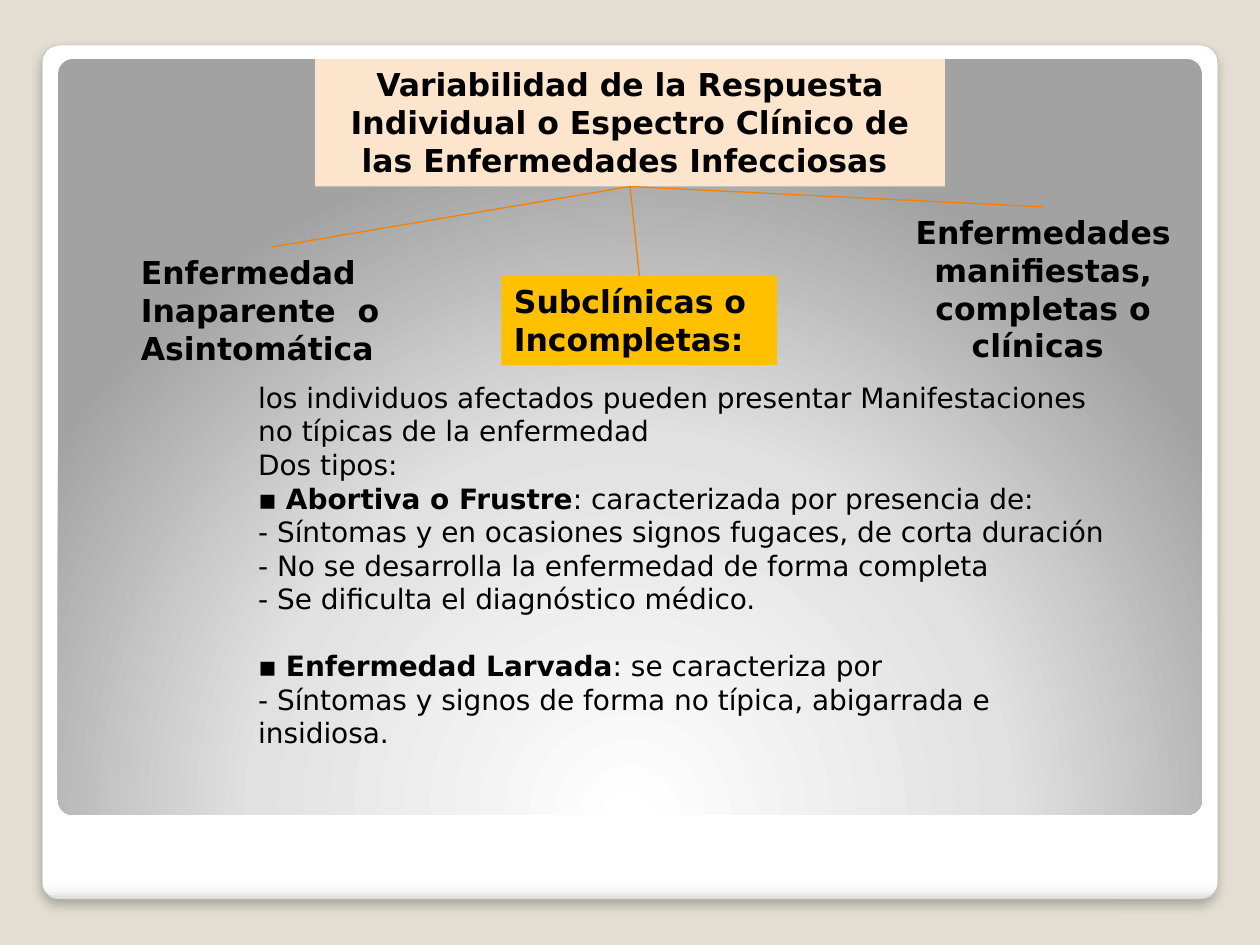
from pptx import Presentation
from pptx.dml.color import RGBColor
from pptx.enum.shapes import MSO_CONNECTOR, MSO_SHAPE
from pptx.enum.text import MSO_ANCHOR, MSO_AUTO_SIZE, PP_ALIGN
from pptx.oxml import parse_xml
from pptx.oxml.ns import nsdecls, qn
from pptx.util import Cm, Pt

FONT = "DejaVu Sans"
BLACK = RGBColor(0x00, 0x00, 0x00)
BEIGE = RGBColor(0xE3, 0xDE, 0xD1)
PEACH = RGBColor(0xFD, 0xE5, 0xCD)
AMBER = RGBColor(0xFF, 0xC0, 0x00)
ORANGE = RGBColor(0xF9, 0x7F, 0x00)
GRAY = RGBColor(0xA4, 0xA4, 0xA4)

CARD_STOPS = [(0, "FFFFFF"), (98, "FFFFFF"), (99, "F7F7F7"), (100, "DADADA")]
CARD_DIRECTION = '<a:lin ang="5400000" scaled="0"/>'
PANEL_STOPS = [(0, "FFFFFF"), (55, "E1E1E1"), (100, "A2A2A2")]
PANEL_DIRECTION = (
    '<a:path path="circle">'
    '<a:fillToRect l="50000" t="175000" r="50000" b="-75000"/></a:path>'
)

TITLE = ("Variabilidad de la Respuesta Individual o Espectro Clínico de "
         "las Enfermedades Infecciosas ")
BRANCHES = [
    ("Enfermedad Inaparente  o Asintomática",
     (2.59, 4.98, 5.77, 2.57), PP_ALIGN.LEFT, None),
    ("Subclínicas o Incompletas:",
     (10.11, 5.56, 5.56, 1.8), PP_ALIGN.LEFT, AMBER),
    ("Enfermedades manifiestas, completas o clínicas ",
     (17.65, 4.17, 6.76, 3.33), PP_ALIGN.CENTER, None),
]
DETAILS = [
    ("los individuos afectados pueden presentar Manifestaciones "
     "no típicas de la enfermedad",),
    ("Dos tipos:",),
    ("▪ ", "Abortiva o Frustre", ": caracterizada por presencia de:"),
    ("- Síntomas y en ocasiones signos fugaces, de corta duración",),
    ("- No se desarrolla la enfermedad de forma completa",),
    ("- Se dificulta el diagnóstico médico.",),
    ("▪ ", "Enfermedad Larvada", ": se caracteriza por"),
    ("- Síntomas y signos de forma no típica, abigarrada e insidiosa.",),
]
SECOND_TYPE = 6


def place(shape, box):
    """Move and size a shape to a box in centimetres."""
    shape.left, shape.top, shape.width, shape.height = map(Cm, box)


def format_font(font, size, bold):
    """Apply the slide's typeface."""
    font.name = FONT
    font.size = Pt(size)
    font.bold = bold
    font.color.rgb = BLACK


def set_up_frame(text_frame):
    """Wrap the text from the top without shrinking it."""
    text_frame.word_wrap = True
    text_frame.auto_size = MSO_AUTO_SIZE.NONE
    text_frame.vertical_anchor = MSO_ANCHOR.TOP


def write_heading(shape, text, alignment, fill):
    """Write a bold heading on an optional fill."""
    set_up_frame(shape.text_frame)
    shape.text_frame.text = text
    paragraph = shape.text_frame.paragraphs[0]
    paragraph.alignment = alignment
    format_font(paragraph.runs[0].font, 18, True)
    if fill is not None:
        shape.fill.solid()
        shape.fill.fore_color.rgb = fill


def add_gradient_panel(slide, box, stops, direction):
    """Add a rounded panel with a gradient fill."""
    panel = slide.shapes.add_shape(MSO_SHAPE.ROUNDED_RECTANGLE, *map(Cm, box))
    panel.adjustments[0] = 0.02
    panel.shadow.inherit = False
    panel.line.fill.background()
    panel.fill.background()
    stop_list = "".join(
        f'<a:gs pos="{position * 1000}"><a:srgbClr val="{color}"/></a:gs>'
        for position, color in stops
    )
    gradient = parse_xml(
        f'<a:gradFill {nsdecls("a")} rotWithShape="1">'
        f"<a:gsLst>{stop_list}</a:gsLst>{direction}</a:gradFill>"
    )
    properties = panel._element.spPr
    properties.replace(properties.find(qn("a:noFill")), gradient)
    return panel


def add_background(slide, box):
    """Add the white card and the gray panel inside it."""
    left, top, width, height = box
    card = add_gradient_panel(slide, box, CARD_STOPS, CARD_DIRECTION)
    card.line.color.rgb = GRAY
    card.line.width = Pt(0.16)
    card._element.spPr.find(qn("a:effectLst")).append(parse_xml(
        f'<a:outerShdw {nsdecls("a")} blurRad="{Pt(6)}" dist="{Pt(4)}" '
        'dir="5400000" algn="tl" rotWithShape="0"><a:srgbClr val="000000">'
        '<a:alpha val="25000"/></a:srgbClr></a:outerShdw>'
    ))
    panel_box = (left + 0.32, top + 0.28, width - 0.64, height - 1.98)
    add_gradient_panel(slide, panel_box, PANEL_STOPS, PANEL_DIRECTION)


def add_title(slide, box):
    """Place the title above the panels."""
    title = slide.shapes.title
    slide.shapes._spTree.append(title._element)
    place(title, box)
    write_heading(title, TITLE, PP_ALIGN.CENTER, PEACH)
    return title


def add_branch(slide, parent, box, text, alignment, fill):
    """Add a heading and join it to its parent."""
    branch = slide.shapes.add_textbox(*map(Cm, box))
    write_heading(branch, text, alignment, fill)
    connector = slide.shapes.add_connector(MSO_CONNECTOR.STRAIGHT, 0, 0, 0, 0)
    connector.begin_connect(parent, 2)
    connector.end_connect(branch, 0)
    connector.line.color.rgb = ORANGE
    connector.line.width = Pt(0.75)
    connector._element.spPr.append(parse_xml(f'<a:effectLst {nsdecls("a")}/>'))


def add_details(slide, box):
    """Fill the body with the description of the subclinical types."""
    body = slide.placeholders[1]
    slide.shapes._spTree.append(body._element)
    place(body, box)
    text_frame = body.text_frame
    set_up_frame(text_frame)
    for index, parts in enumerate(DETAILS):
        paragraph = text_frame.paragraphs[0] if index == 0 else text_frame.add_paragraph()
        paragraph.space_before = Pt(19 if index == SECOND_TYPE else 0)
        properties = paragraph._p.get_or_add_pPr()
        properties.set("marL", "0")
        properties.set("indent", "0")
        properties.append(parse_xml(f'<a:buNone {nsdecls("a")}/>'))
        for position, text in enumerate(parts):
            run = paragraph.add_run()
            run.text = text
            format_font(run.font, 16, position == 1)


def main():
    """Build and save the presentation."""
    presentation = Presentation()
    presentation.slide_width = Cm(25.4)
    presentation.slide_height = Cm(19.05)
    slide = presentation.slides.add_slide(presentation.slide_layouts[1])
    slide.background.fill.solid()
    slide.background.fill.fore_color.rgb = BEIGE
    add_background(slide, (0.85, 0.91, 23.7, 17.22))
    title = add_title(slide, (6.35, 1.19, 12.7, 2.57))
    for text, box, alignment, fill in BRANCHES:
        add_branch(slide, title, box, text, alignment, fill)
    add_details(slide, (4.95, 7.54, 17.65, 9.4))
    presentation.save("out.pptx")


if __name__ == "__main__":
    main()
